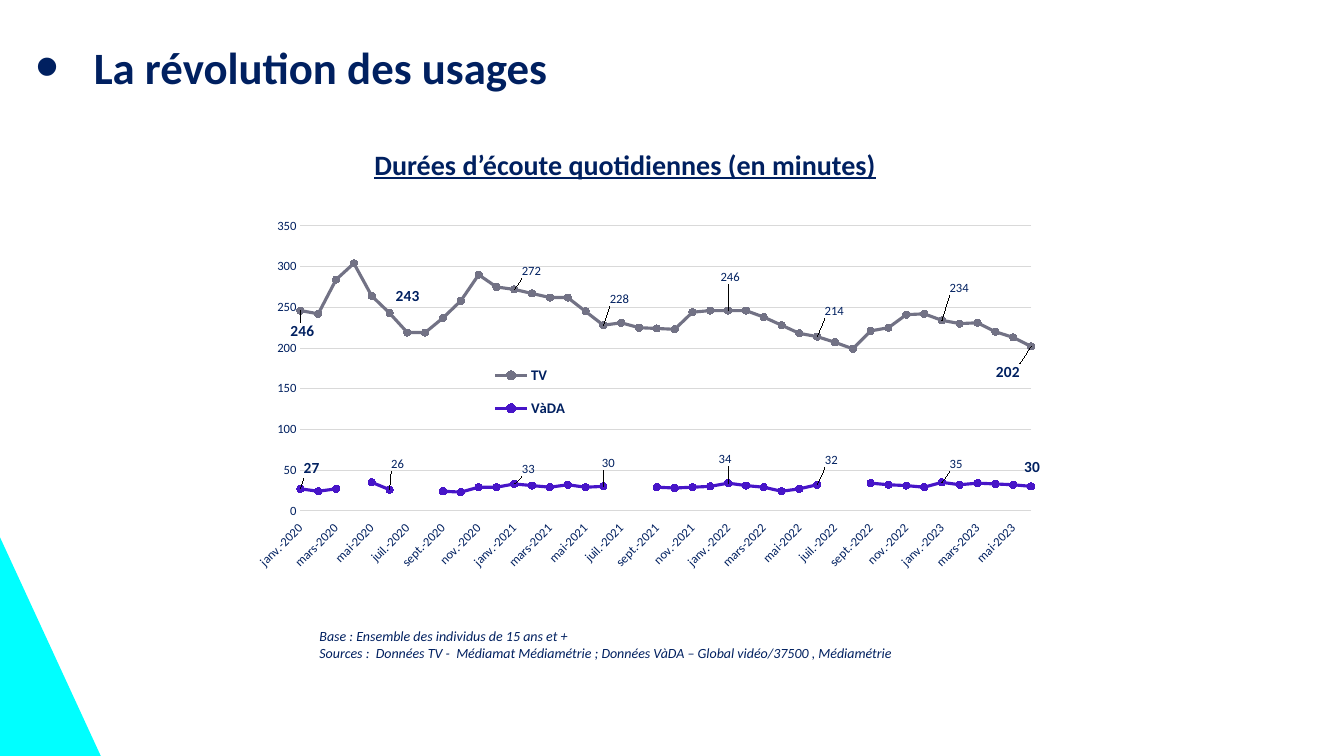
from dataclasses import dataclass

from lxml import etree
from pptx import Presentation
from pptx import oxml
from pptx.chart import data as chart_data
from pptx.dml.color import RGBColor
from pptx.enum import chart as charts, text
from pptx.oxml.ns import qn
from pptx.util import Inches, Pt


@dataclass(frozen=True)
class Theme:
    font: str = "Calibri"
    navy: RGBColor = RGBColor(0x00, 0x20, 0x60)
    cyan: RGBColor = RGBColor(0x00, 0xFF, 0xFF)
    tv: RGBColor = RGBColor(0x72, 0x72, 0x85)
    vada: RGBColor = RGBColor(0x47, 0x15, 0xC8)
    grid: RGBColor = RGBColor(0xD9, 0xD9, 0xD9)
    title: float = 32
    heading: float = 20
    key_label: float = 11
    legend: float = 10.5
    note: float = 10
    label: float = 9


theme = Theme()


def style(font, size, **formats):
    font.color.rgb = theme.navy
    for name, value in {"name": theme.font, "size": Pt(size), **formats}.items():
        setattr(font, name, value)


def place(parent, index, **values):
    """Give a chart part a manual layout at the given child index."""
    for old in parent.findall(qn("c:layout")):
        parent.remove(old)
    layout = oxml.parse_xml(
        '<c:layout xmlns:c="http://schemas.openxmlformats.org/drawingml/2006/chart">'
        "<c:manualLayout/></c:layout>")
    for name, value in values.items():
        etree.SubElement(layout[0], qn(f"c:{name}")).set("val", str(value))
    parent.insert(index, layout)


deck = Presentation()
deck.slide_width, deck.slide_height = Inches(13.33), Inches(7.5)
page = deck.slides.add_slide(deck.slide_layouts[5])

# Corner triangle
builder = page.shapes.build_freeform(0, Inches(7.5), scale=1.0)
builder.add_line_segments([(Inches(1), Inches(7.5)), (0, Inches(5.33))], close=True)
corner = builder.convert_to_shape()
corner.shadow.inherit = False
corner.fill.solid()
corner.fill.fore_color.rgb = theme.cyan
corner.line.fill.background()

# Title with a large bullet
title = page.shapes.title
title.left, title.top = Inches(0.27), Inches(0.34)
title.width, title.height = Inches(11.32), Inches(0.64)
frame = title.text_frame
frame.auto_size = text.MSO_AUTO_SIZE.NONE
frame.vertical_anchor = text.MSO_ANCHOR.TOP
frame.margin_left = Inches(0.08)
frame.text = "La révolution des usages"
para = frame.paragraphs[0]
para.alignment = text.PP_ALIGN.LEFT
props = para._p.get_or_add_pPr()
props.set("marL", str(Inches(0.58)))
props.set("indent", str(-Inches(0.58)))
for tag, name, value in (("buSzPct", "val", "150000"), ("buFont", "typeface", "Arial"),
                         ("buChar", "char", "•")):
    etree.SubElement(props, qn(f"a:{tag}")).set(name, value)
style(para.font, theme.title, bold=True)

# Chart data
months = ["janv.", "févr.", "mars", "avr.", "mai", "juin",
          "juil.", "août", "sept.", "oct.", "nov.", "déc."]
data = chart_data.CategoryChartData(number_format="0")
data.categories = [f"{month}-{year}" for year in range(2020, 2024) for month in months][:42]
data.add_series("TV", [
    246, 242, 284, 304, 264, 243, 219, 219, 237, 258, 290, 275,
    272, 267, 262, 262, 245, 228, 231, 225, 224, 223, 244, 246,
    246, 246, 238, 228, 218, 214, 207, 199, 221, 225, 241, 242,
    234, 230, 231, 220, 213, 202])
data.add_series("VàDA", [
    27, 24, 27, None, 35, 26, None, None, 24, 23, 29, 29,
    33, 31, 29, 32, 29, 30, None, None, 29, 28, 29, 30,
    34, 31, 29, 24, 27, 32, None, None, 34, 32, 31, 29,
    35, 32, 34, 33, 32, 30])

# Line chart
chart_width, chart_height = 8.87, 4.22
chart = page.shapes.add_chart(
    charts.XL_CHART_TYPE.LINE_MARKERS, Inches(2.51), Inches(2.01),
    Inches(chart_width), Inches(chart_height), data).chart
chart.has_title = False
style(chart.font, theme.note)
chart.plots[0].vary_by_categories = False
place(chart._chartSpace.chart.plotArea, 0, layoutTarget="inner", xMode="edge",
      yMode="edge", x=0.053, y=0.055, w=0.817, h=0.67)

# Axes
months_axis, minutes_axis = chart.category_axis, chart.value_axis
for axis in (months_axis, minutes_axis):
    axis.major_tick_mark = axis.minor_tick_mark = charts.XL_TICK_MARK.NONE
    style(axis.tick_labels.font, theme.label)
months_axis.tick_label_position = charts.XL_TICK_LABEL_POSITION.LOW
months_xml = months_axis._element
months_xml.find(qn("c:txPr")).find(qn("a:bodyPr")).set("rot", "-2700000")
skip = etree.Element(qn("c:tickLblSkip"), val="2")
months_xml.find(qn("c:noMultiLvlLbl")).addprevious(skip)
minutes_axis.minimum_scale, minutes_axis.maximum_scale = 0, 350
minutes_axis.major_unit = 50
minutes_axis.has_major_gridlines = True
crossing = etree.Element(qn("c:crossBetween"), val="midCat")
minutes_axis._element.find(qn("c:crosses")).addnext(crossing)
for line in (months_axis.format.line, minutes_axis.major_gridlines.format.line):
    line.color.rgb = theme.grid
    line.width = Pt(0.75)
minutes_axis.format.line.fill.background()

# Legend inside the plot
chart.has_legend = True
chart.legend.position = charts.XL_LEGEND_POSITION.BOTTOM
chart.legend.include_in_layout = False
style(chart.legend.font, theme.legend, bold=True)
place(chart.legend._element, 1, xMode="edge", yMode="edge", x=0.26, y=0.35, w=0.1, h=0.19)

# Series, with label offsets from their points in inches
labels = {
    "TV": {0: (0.02, 0.21), 5: (0.18, -0.17), 12: (0.17, -0.18), 17: (0.16, -0.26),
           24: (0.02, -0.33), 29: (0.17, -0.25), 36: (0.17, -0.32), 41: (-0.23, 0.26)},
    "VàDA": {0: (0.11, -0.2), 5: (0.08, -0.25), 12: (0.14, -0.15), 17: (0.05, -0.23),
             24: (-0.03, -0.24), 29: (0.14, -0.24), 36: (0.14, -0.18), 41: (0.01, -0.19)},
}
key_points = {"TV": (0, 5, 41), "VàDA": (0, 41)}
for series, color in zip(chart.plots[0].series, (theme.tv, theme.vada)):
    series.smooth = False
    series.format.line.color.rgb = color
    series.format.line.width = Pt(2.25)
    series.marker.style = charts.XL_MARKER_STYLE.CIRCLE
    series.marker.size = 5
    series.marker.format.fill.solid()
    series.marker.format.fill.fore_color.rgb = color
    series.marker.format.line.color.rgb = color
    series.data_labels.show_value = False
    for index, (across, down) in labels[series.name].items():
        key = index in key_points[series.name]
        label = series.points[index].data_label
        style(label.font, theme.key_label if key else theme.label, bold=key)
        label.position = charts.XL_LABEL_POSITION.CENTER
        place(label._dLbl, 1, x=round(across / chart_width, 4), y=round(down / chart_height, 4))

# Chart heading and source note
captions = [
    (2.6, 1.41, "Durées d’écoute quotidiennes (en minutes)", text.PP_ALIGN.CENTER,
     theme.heading, {"bold": True, "underline": True}),
    (3.07, 6.18, "Base : Ensemble des individus de 15 ans et +\v"
     "Sources :  Données TV -  Médiamat Médiamétrie ; "
     "Données VàDA – Global vidéo/37500 , Médiamétrie",
     text.PP_ALIGN.LEFT, theme.note, {"italic": True}),
]
for left, top, words, alignment, size, formats in captions:
    box = page.shapes.add_textbox(Inches(left), Inches(top), Inches(7.2), Inches(0.44))
    box.text_frame.word_wrap = True
    box.text_frame.text = words
    para = box.text_frame.paragraphs[0]
    para.alignment = alignment
    style(para.font, size, **formats)

deck.save("out.pptx")
